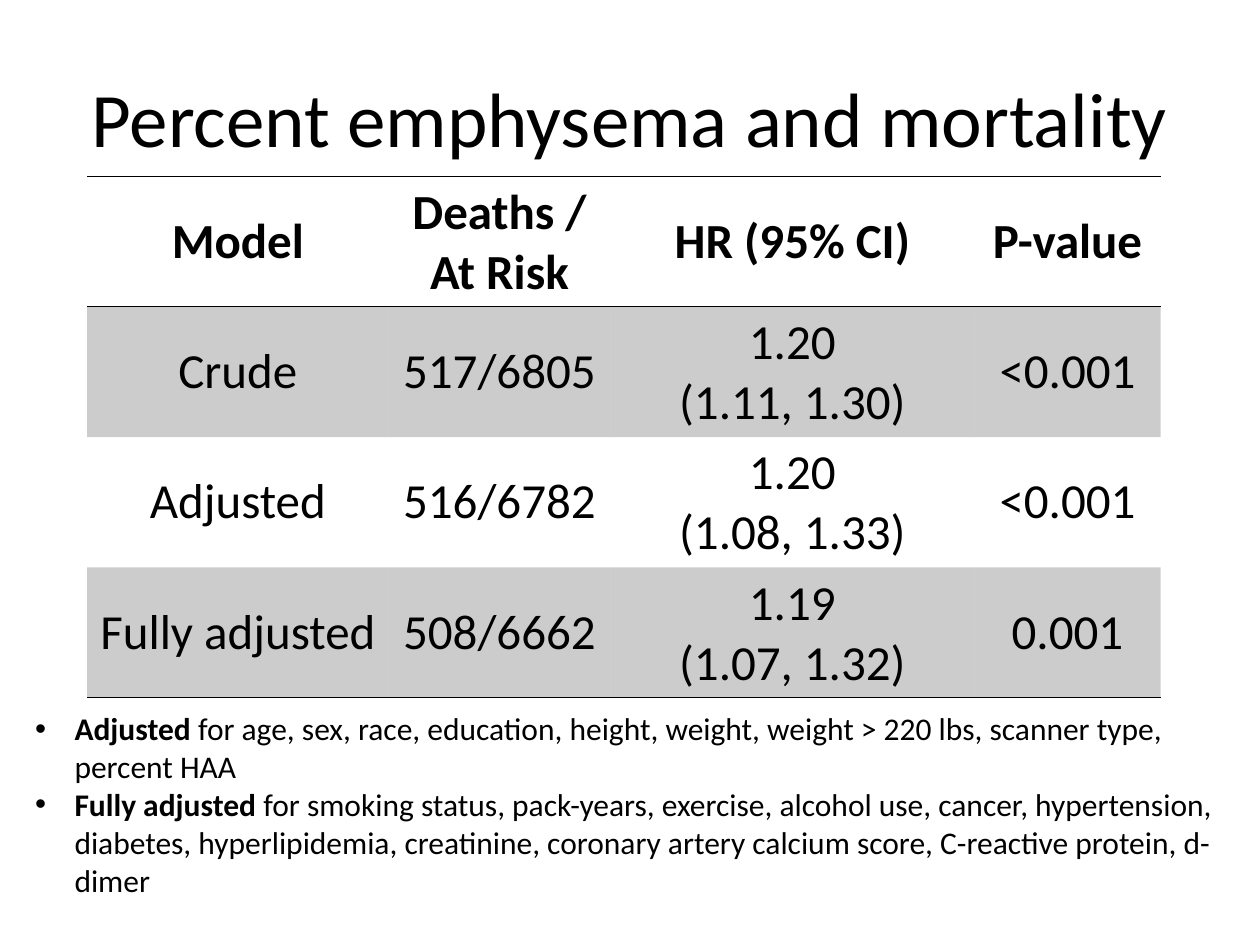
from lxml import etree
from pptx import Presentation
from pptx.dml.color import RGBColor
from pptx.enum import text
from pptx.oxml import ns
from pptx.util import Pt

COLOURS = {"ink": "000000", "paper": "FFFFFF"}
NO_GRID_STYLE = "{2D5ABB26-0587-4C30-8999-92F81FD0307C}"


def add_node(parent, tag, **values):
    return etree.SubElement(parent, ns.qn(tag), values)


class SlideWriter:
    font_name = "Calibri"

    def __init__(self, page):
        self.page = page
        background = page.background.fill
        background.solid()
        background.fore_color.rgb = RGBColor.from_string(COLOURS["paper"])

    def add_span(self, para, words, size, bold=False):
        span = para.add_run()
        span.text = words
        style = {"name": self.font_name, "size": Pt(size), "bold": bold}
        for name, value in style.items():
            setattr(span.font, name, value)
        span.font.color.rgb = RGBColor.from_string(COLOURS["ink"])

    def add_box(self, left, top, width, height, anchor):
        box = self.page.shapes.add_textbox(Pt(left), Pt(top), Pt(width), Pt(height))
        layout = {"word_wrap": True, "vertical_anchor": anchor}
        for name, value in layout.items():
            setattr(box.text_frame, name, value)
        return box.text_frame

    def add_title(self, words, *place):
        para = self.add_box(*place, text.MSO_ANCHOR.MIDDLE).paragraphs[0]
        para.alignment = text.PP_ALIGN.CENTER
        self.add_span(para, words, 44)

    def add_notes_list(self, entries, *place):
        frame = self.add_box(*place, text.MSO_ANCHOR.TOP)
        frame.auto_size = text.MSO_AUTO_SIZE.SHAPE_TO_FIT_TEXT
        for index, (lead, rest) in enumerate(entries):
            para = frame.add_paragraph() if index else frame.paragraphs[0]
            properties = para._p.get_or_add_pPr()
            indent = Pt(22.5)
            properties.set("marL", str(indent))
            properties.set("indent", str(-indent))
            add_node(properties, "a:buFont", typeface="Arial")
            add_node(properties, "a:buChar", char="•")
            self.add_span(para, lead, 18, bold=True)
            self.add_span(para, rest, 18)

    def add_rule(self, cell, tag):
        line = etree.Element(ns.qn(tag), w=str(Pt(1)))
        fill = add_node(line, "a:solidFill")
        add_node(fill, "a:srgbClr", val=COLOURS["ink"])
        cell._tc.get_or_add_tcPr().insert(0, line)

    def shade(self, cell, is_banded):
        if not is_banded:
            cell.fill.background()
            return
        cell.fill.solid()
        cell.fill.fore_color.rgb = RGBColor.from_string(COLOURS["ink"])
        colour = cell._tc.tcPr.find(".//" + ns.qn("a:srgbClr"))
        add_node(colour, "a:alpha", val="20000")

    def fill_cell(self, cell, words, is_header):
        cell.vertical_anchor = text.MSO_ANCHOR.MIDDLE
        for index, line in enumerate(words.split("\n")):
            frame = cell.text_frame
            para = frame.add_paragraph() if index else frame.paragraphs[0]
            para.alignment = text.PP_ALIGN.CENTER
            self.add_span(para, line, 28, bold=is_header)

    def add_table(self, rows, widths, left, top, row_height):
        frame = self.page.shapes.add_table(
            len(rows), len(widths), Pt(left), Pt(top),
            Pt(sum(widths)), Pt(row_height * len(rows)))
        table = frame.table
        table._tbl.tblPr.find(ns.qn("a:tableStyleId")).text = NO_GRID_STYLE
        for column, width in zip(table.columns, widths):
            column.width = Pt(width)
        last = len(rows) - 1
        for row, values in enumerate(rows):
            for column, words in enumerate(values):
                cell = table.cell(row, column)
                self.fill_cell(cell, words, row == 0)
                self.shade(cell, row % 2 == 1)
                if row in (0, last):
                    self.add_rule(cell, "a:lnB")
                if row == 0:
                    self.add_rule(cell, "a:lnT")


def main():
    deck = Presentation()
    deck.slide_width, deck.slide_height = Pt(720), Pt(540)
    writer = SlideWriter(deck.slides.add_slide(deck.slide_layouts[6]))
    writer.add_title("Percent emphysema and mortality", 36, 21.6, 648, 90)
    results = [
        ("Model", "Deaths / At Risk", "HR (95% CI)", "P-value"),
        ("Crude", "517/6805", "1.20\n(1.11, 1.30)", "<0.001"),
        ("Adjusted", "516/6782", "1.20\n(1.08, 1.33)", "<0.001"),
        ("Fully adjusted", "508/6662", "1.19\n(1.07, 1.32)", "0.001"),
    ]
    writer.add_table(results, [172.2, 126.8, 208, 106.5], 49.8, 100.8, 74.4)
    writer.add_notes_list([
        ("Adjusted", " for age, sex, race, education, height, weight, "
         "weight > 220 lbs, scanner type, percent HAA"),
        ("Fully adjusted ", "for smoking status, pack-years, exercise, "
         "alcohol use, cancer, hypertension, diabetes, hyperlipidemia, "
         "creatinine, coronary artery calcium score, C-reactive protein, d-dimer"),
    ], 13, 401.8, 690, 116.6)
    deck.save("out.pptx")


if __name__ == "__main__":
    main()
